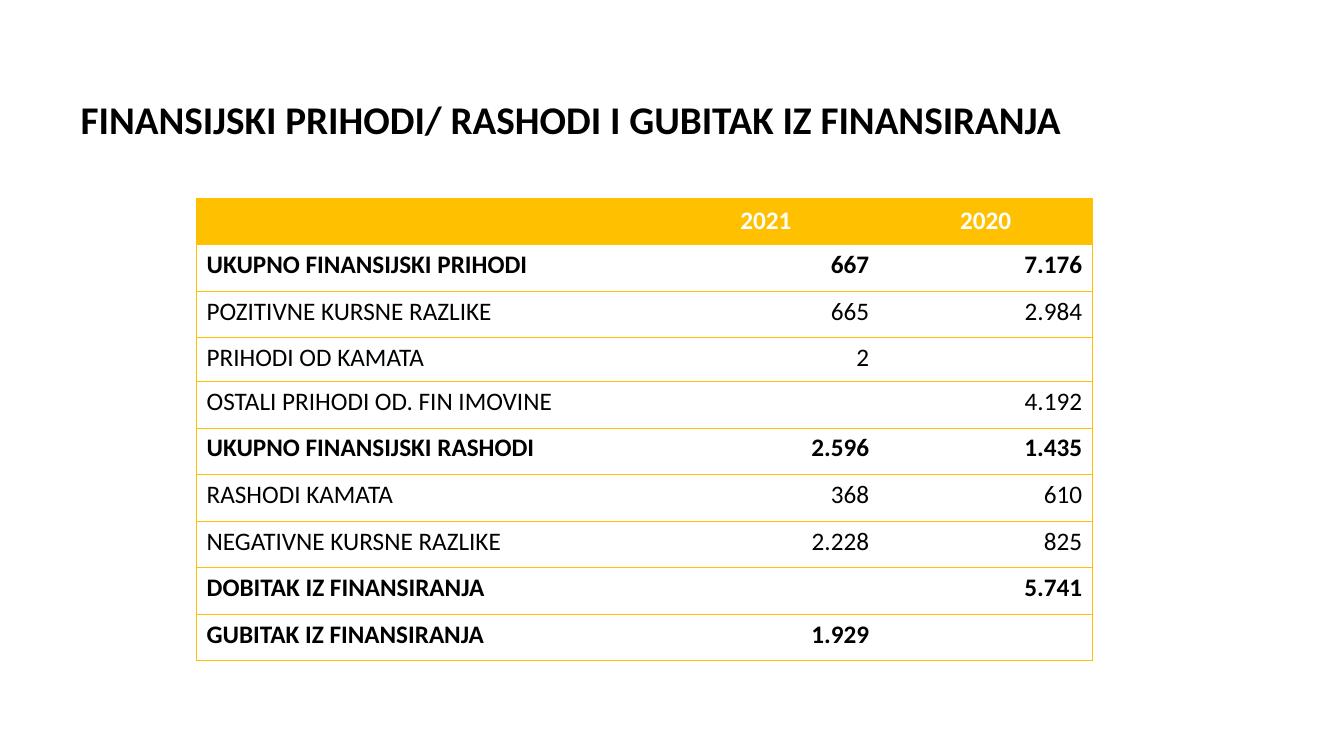
import pptx
import pptx.dml.color
import pptx.enum.text
import pptx.oxml
import pptx.oxml.ns
import pptx.util

Pt = pptx.util.Pt
ALIGN = pptx.enum.text.PP_ALIGN
ANCHOR = pptx.enum.text.MSO_ANCHOR

GOLD = "FFC000"
WHITE = "FFFFFF"
BLACK = "000000"

COLUMN_WIDTHS = (325.7, 161.9, 152.2)
ROW_HEIGHT = 33.3
INTEREST_ROW_HEIGHT = 31.2
HEADINGS = ("", "2021", "2020")
ENTRIES = (
    ("UKUPNO FINANSIJSKI PRIHODI", "667", "7.176", True),
    ("POZITIVNE KURSNE RAZLIKE", "665", "2.984", False),
    ("PRIHODI OD KAMATA", "2", "", False),
    ("OSTALI PRIHODI OD. FIN IMOVINE", "", "4.192", False),
    ("UKUPNO FINANSIJSKI RASHODI", "2.596", "1.435", True),
    ("RASHODI KAMATA", "368", "610", False),
    ("NEGATIVNE KURSNE RAZLIKE", "2.228", "825", False),
    ("DOBITAK IZ FINANSIRANJA", "", "5.741", True),
    ("GUBITAK IZ FINANSIRANJA", "1.929", "", True),
)


def color(value):
    return pptx.dml.color.RGBColor.from_string(value)


def style_paragraph(paragraph, size, value, bold, alignment):
    paragraph.alignment = alignment
    paragraph.font.name = "Calibri"
    paragraph.font.size = Pt(size)
    paragraph.font.bold = bold
    paragraph.font.color.rgb = color(value)


def add_title(slide, text):
    title = slide.shapes.title
    title.left, title.top = Pt(50.4), Pt(34.6)
    title.width, title.height = Pt(875.5), Pt(104.4)
    frame = title.text_frame
    frame.text = text
    frame.word_wrap = True
    frame.vertical_anchor = ANCHOR.MIDDLE
    heading = frame.paragraphs[0]
    heading.line_spacing = 0.9
    style_paragraph(heading, 28, BLACK, True, ALIGN.LEFT)


def set_borders(cell, gold_sides):
    properties = cell._tc.get_or_add_tcPr()
    namespace = pptx.oxml.ns.nsdecls("a")
    for position, side in enumerate("LRTB"):
        paint = "<a:noFill/>"
        if side in gold_sides:
            paint = f'<a:solidFill><a:srgbClr val="{GOLD}"/></a:solidFill>'
        border = pptx.oxml.parse_xml(
            f'<a:ln{side} {namespace} w="{Pt(0.5)}">{paint}</a:ln{side}>'
        )
        properties.insert(position, border)


def fill_cell(cell, text, value, bold, alignment, background, gold_sides):
    cell.text = text
    style_paragraph(cell.text_frame.paragraphs[0], 18, value, bold, alignment)
    if background:
        cell.fill.solid()
        cell.fill.fore_color.rgb = color(background)
    else:
        cell.fill.background()
    set_borders(cell, gold_sides)


def add_finance_table(slide):
    row_count = len(ENTRIES) + 1
    table = slide.shapes.add_table(
        row_count, len(HEADINGS), Pt(140.4), Pt(141.3),
        Pt(sum(COLUMN_WIDTHS)), Pt(ROW_HEIGHT * row_count),
    ).table
    table.first_row = False
    table.horz_banding = False
    for column, width in zip(table.columns, COLUMN_WIDTHS):
        column.width = Pt(width)
    for row in table.rows:
        row.height = Pt(ROW_HEIGHT)
    table.rows[3].height = Pt(INTEREST_ROW_HEIGHT)

    outer_sides = ("LTB", "TB", "RTB")
    for index, year in enumerate(HEADINGS):
        cell = table.cell(0, index)
        fill_cell(cell, year, WHITE, True, ALIGN.CENTER, GOLD, outer_sides[index])
        cell.vertical_anchor = ANCHOR.MIDDLE
    for row_index, (*texts, bold) in enumerate(ENTRIES, 1):
        for index, text in enumerate(texts):
            alignment = ALIGN.RIGHT if index else ALIGN.LEFT
            cell = table.cell(row_index, index)
            fill_cell(cell, text, BLACK, bold, alignment, None, outer_sides[index])


def main():
    presentation = pptx.Presentation()
    presentation.slide_width = Pt(960)
    presentation.slide_height = Pt(540)
    slide = presentation.slides.add_slide(presentation.slide_layouts[5])
    add_title(slide, "FINANSIJSKI PRIHODI/ RASHODI I GUBITAK IZ FINANSIRANJA")
    add_finance_table(slide)
    presentation.save("out.pptx")


if __name__ == "__main__":
    main()
